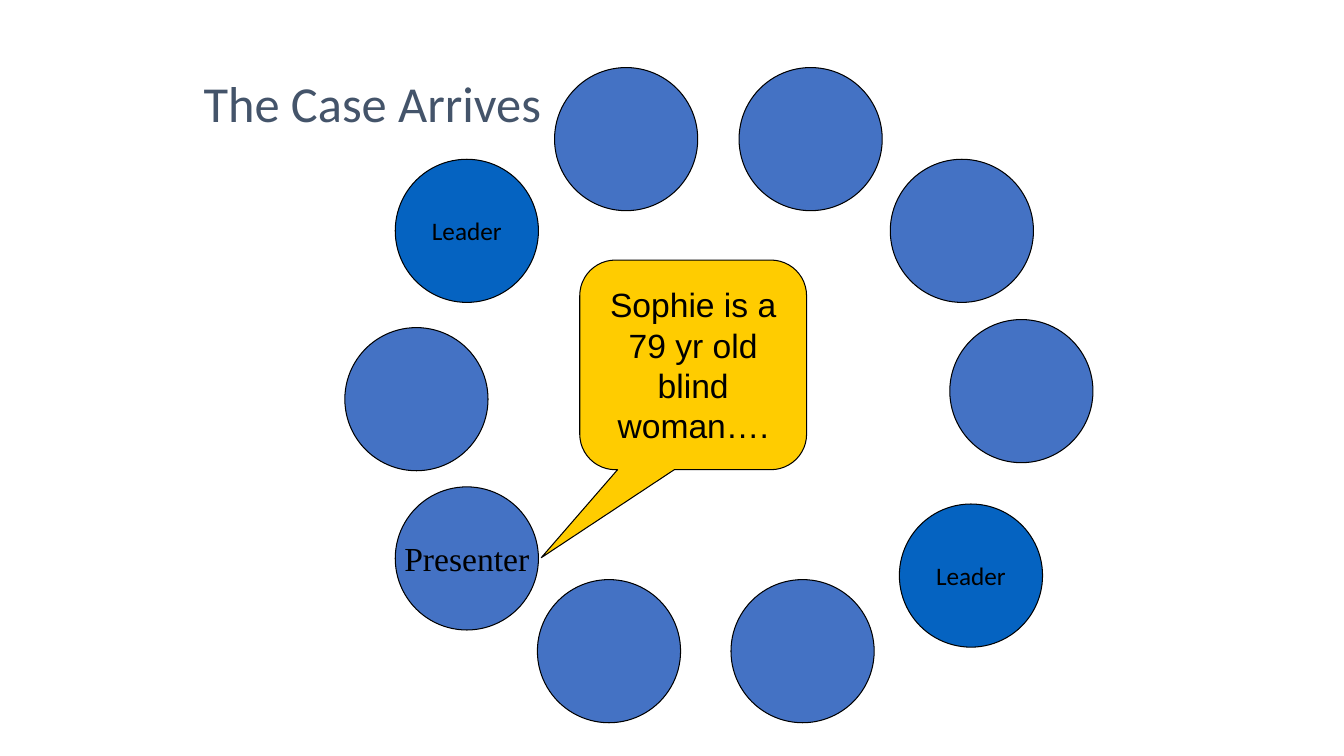
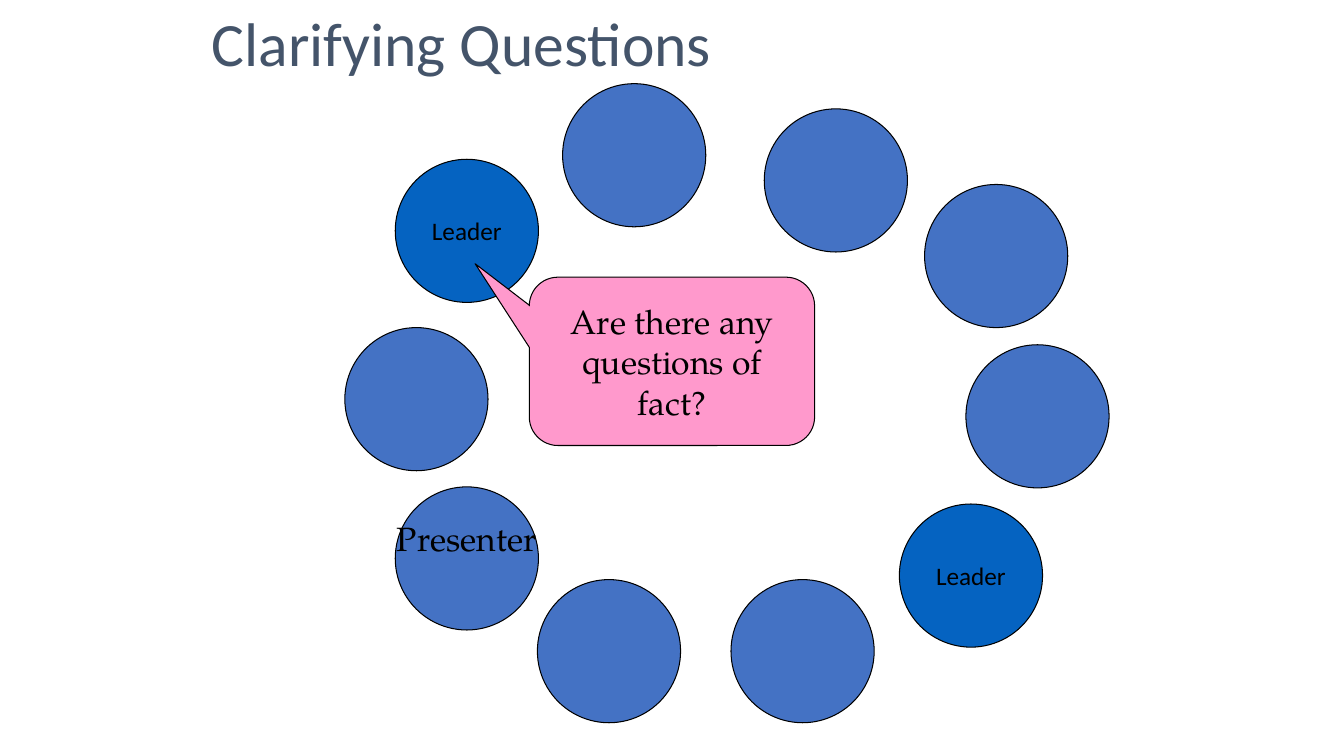
from pptx import Presentation
from pptx.dml.color import RGBColor
from pptx.enum.shapes import MSO_SHAPE
from pptx.enum.text import MSO_ANCHOR, MSO_AUTO_SIZE, PP_ALIGN
from pptx.util import Inches, Pt

BLACK, SEAT, LEADER, TITLE = "000000", "4472C4", "0563C1", "44546A"
SEAT_SIZE = 1.42
LEADERS = [(3.92, 1.58), (8.92, 5)]
PRESENTER = (3.92, 4.83)
SHARED_SEATS = [(7.25, 5.75), (5.33, 5.75), (3.42, 3.25)]

SLIDES = [
    {
        "title": ("The Case Arrives", (1.92, 0.67, 4.42, 0.71), 36),
        "seats": [(5.5, 0.67), (7.33, 0.67), (8.83, 1.58), (9.42, 3.17)],
        "presenter": ("Times New Roman", 0.05),
        "callout": ("Sophie is a 79 yr old blind woman….", (5.75, 2.58, 2.25, 2.08),
                    "FFCC00", "Arial", (-0.67, 0.92, 0.17)),
    },
    {
        "title": ("Clarifying Questions", (2, 0, 5.58, 0.84), 44),
        "seats": [(5.58, 0.83), (7.58, 1.08), (9.17, 1.83), (9.58, 3.42)],
        "presenter": ("TeX Gyre Pagella", 0.45),
        "callout": ("Are there any questions of fact?", (5.25, 2.75, 2.83, 1.67),
                    "FF99CC", "TeX Gyre Pagella", (-0.69, -0.58, 0.17)),
    },
]


def rgb(value):
    return RGBColor.from_string(value)


def write(sp, text, font, size, color=BLACK, align=PP_ALIGN.CENTER, wrap=True):
    tf = sp.text_frame
    tf.text = text
    tf.word_wrap = wrap
    p = tf.paragraphs[0]
    p.alignment = align
    f = p.runs[0].font
    f.name, f.size, f.color.rgb = font, Pt(size), rgb(color)
    return tf


def add_shape(s, kind, box, fill):
    sp = s.shapes.add_shape(kind, *map(Inches, box))
    sp.shadow.inherit = False
    sp.fill.solid()
    sp.fill.fore_color.rgb = rgb(fill)
    sp.line.color.rgb = rgb(BLACK)
    sp.line.width = Pt(0.75)
    sp.text_frame.vertical_anchor = MSO_ANCHOR.MIDDLE
    return sp


def add_seat(s, at, fill=SEAT):
    return add_shape(s, MSO_SHAPE.OVAL, (*at, SEAT_SIZE, SEAT_SIZE), fill)


def add_title(s, text, box, size):
    sp = s.shapes.add_textbox(*map(Inches, box))
    tf = write(sp, text, "Calibri", size, TITLE, PP_ALIGN.LEFT)
    tf.auto_size = MSO_AUTO_SIZE.SHAPE_TO_FIT_TEXT


def add_callout(s, text, box, fill, font, adjustments):
    sp = add_shape(s, MSO_SHAPE.ROUNDED_RECTANGULAR_CALLOUT, box, fill)
    for i, value in enumerate(adjustments):
        sp.adjustments[i] = value
    write(sp, text, font, 24)


def build(prs, content):
    s = prs.slides.add_slide(prs.slide_layouts[6])
    for at in LEADERS:
        write(add_seat(s, at, LEADER), "Leader", "Calibri", 18, wrap=False)
    for at in SHARED_SEATS + content["seats"]:
        add_seat(s, at)
    font, bottom = content["presenter"]
    tf = write(add_seat(s, PRESENTER), "Presenter", font, 24, wrap=False)
    tf.margin_bottom = Inches(bottom)
    add_title(s, *content["title"])
    add_callout(s, *content["callout"])


def main():
    prs = Presentation()
    prs.slide_width, prs.slide_height = Inches(13.33), Inches(7.5)
    for content in SLIDES:
        build(prs, content)
    prs.save("out.pptx")


if __name__ == "__main__":
    main()
